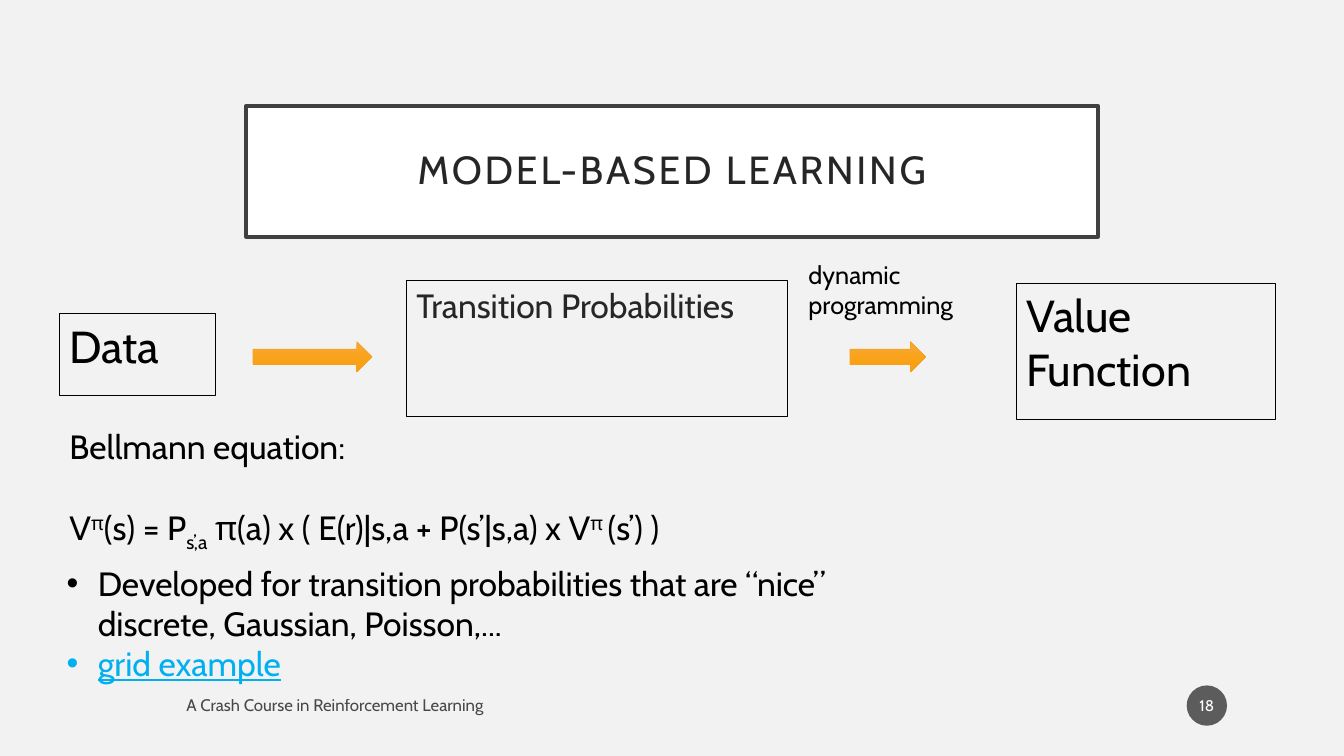
"""Build the slide on model-based learning."""
from dataclasses import dataclass
from copy import deepcopy
from lxml.etree import SubElement
from pptx import Presentation
from pptx.dml.color import RGBColor
from pptx.enum.shapes import MSO_SHAPE
from pptx.enum.text import MSO_ANCHOR, MSO_AUTO_SIZE, PP_ALIGN
from pptx.oxml.ns import qn
from pptx.util import Inches, Pt


@dataclass(frozen=True)
class Theme:
    font: str = "Cabin"
    back: str = "F2F2F2"
    white: str = "FFFFFF"
    black: str = "000000"
    ink: str = "262626"
    frame: str = "404040"
    badge: str = "1D1D1D"
    link: str = "00B0F0"
    edge: str = "F6A21D"
    glow: tuple = ("F7A942", "F9A31A", "F99E0F")
    head: int = 28
    big: int = 32
    body: int = 24
    note: int = 18
    foot: int = 12
    page: int = 11


T = Theme()
WIDE, HIGH = 13.33, 7.5
TITLE = "MODEL-BASED LEARNING"
STATE = "Transition Probabilities"
BOXES = [("Data", (0.59, 3.11, 1.55, 0.81)),
         ("Value Function", (10.08, 2.81, 2.57, 1.35))]
ARROWS = [(2.51, 1.18), (8.43, 0.75)]
STEP = "dynamic programming"
RULE = "Bellmann equation: "
TERMS = [("V", 0), ("π", 30), ("(s) = P", 0), ("s’,a", -25),
         (" π(a) x ( E(r)|s,a + P(s’|s,a) x V", 0), ("π ", 30), ("(s’) )", 0)]
POINTS = ["Developed for transition probabilities that are “nice”\vdiscrete, Gaussian, Poisson,...",
          "grid example"]
FOOT = "A Crash Course in Reinforcement Learning"
PAGE = "18"


def rgb(code):
    return RGBColor.from_string(code)


def place(shape, at):
    shape.left, shape.top, shape.width, shape.height = map(Inches, at)


def style(par, size, color=T.black, gap=0):
    par.font.name, par.font.size = T.font, Pt(size)
    par.font.color.rgb = rgb(color)
    par.space_before = Pt(gap)


def fade(node):
    SubElement(next(node.iter(qn("a:srgbClr"))), qn("a:alpha"), val="70000")


def border(shape, color=T.black, width=0.75):
    shape.line.color.rgb = rgb(color)
    shape.line.width = Pt(width)


def indent(par, depth, mark=None):
    prop = par._p.get_or_add_pPr()
    prop.set("marL", str(Inches(depth)))
    prop.set("indent", str(-Inches(depth)))
    bullet = prop.makeelement(qn("a:buChar" if mark else "a:buNone"), {"char": mark} if mark else {})
    prop.insert_element_before(bullet, "a:tabLst", "a:defRPr", "a:extLst")


def label(slide, at, text, size, grow=True):
    box = slide.shapes.add_textbox(*map(Inches, at))
    frame = box.text_frame
    frame.word_wrap = True
    frame.auto_size = MSO_AUTO_SIZE.SHAPE_TO_FIT_TEXT if grow else MSO_AUTO_SIZE.NONE
    frame.text = text
    style(frame.paragraphs[0], size)
    return box


def title(slide):
    shape = slide.shapes.title
    place(shape, (2.44, 1.05, 8.45, 1.3))
    shape.fill.solid()
    shape.fill.fore_color.rgb = rgb(T.white)
    border(shape, T.frame, 2.5)
    frame = shape.text_frame
    frame.text = TITLE
    frame.auto_size = MSO_AUTO_SIZE.NONE
    frame.vertical_anchor = MSO_ANCHOR.MIDDLE
    frame.margin_left = frame.margin_right = Inches(0.2)
    frame.margin_top = frame.margin_bottom = Inches(0.2)
    par = frame.paragraphs[0]
    style(par, T.head, T.ink)
    par.alignment, par.line_spacing = PP_ALIGN.CENTER, 0.9
    par.runs[0].font._element.set("spc", "200")


def arrow(slide, left, width):
    shape = slide.shapes.add_shape(MSO_SHAPE.RIGHT_ARROW, *map(Inches, (left, 3.39, width, 0.3)))
    shape.shadow.inherit = False
    shape.fill.gradient()
    shape.fill.gradient_angle = 270
    first = next(shape.element.iter(qn("a:gs")))
    middle = deepcopy(first)
    middle.set("pos", "50000")
    first.addnext(middle)
    for stop, color in zip(shape.fill.gradient_stops, T.glow):
        stop.color.rgb = rgb(color)
    border(shape, T.edge, 0.5)


def flow(slide):
    state = slide.placeholders[1]
    place(state, (4.03, 2.78, 3.78, 1.35))
    border(state)
    state.text_frame.text = STATE
    state.text_frame.auto_size = MSO_AUTO_SIZE.NONE
    par = state.text_frame.paragraphs[0]
    style(par, T.body, T.ink, 10)
    indent(par, 0)
    for text, at in BOXES:
        box = label(slide, at, text, T.big, False)
        border(box)
        box.text_frame.paragraphs[0].space_before = Pt(T.big * 0.2)
    for left, width in ARROWS:
        arrow(slide, left, width)
    label(slide, (7.92, 2.52, 2.28, 0.71), STEP, T.note)


def maths(slide):
    box = label(slide, (0.59, 4.18, 11.76, 1.31), RULE, T.body)
    par = box.text_frame.add_paragraph()
    style(par, T.body, gap=29)
    for text, base in TERMS:
        run = par.add_run()
        run.text = text
        if base:
            run.font._element.set("baseline", str(base * 1000))


def points(slide):
    body = slide.placeholders[2]
    place(body, (0.56, 5.53, 12.06, 1.31))
    frame = body.text_frame
    frame.auto_size = MSO_AUTO_SIZE.NONE
    frame.text = "\n".join(POINTS)
    for par, color in zip(frame.paragraphs, (T.black, T.link)):
        style(par, T.body, color)
        indent(par, 0.31, "•")
    frame.paragraphs[1].runs[0].font.underline = True


def footer(slide):
    note = label(slide, (1.75, 6.82, 6.45, 0.35), FOOT, T.foot, False)
    note.text_frame.vertical_anchor = MSO_ANCHOR.MIDDLE
    fade(note.element)
    badge = slide.shapes.add_shape(MSO_SHAPE.OVAL, *map(Inches, (11.77, 6.8, 0.4, 0.4)))
    badge.shadow.inherit = False
    badge.fill.solid()
    badge.fill.fore_color.rgb = rgb(T.badge)
    fade(badge.element)
    badge.line.fill.background()
    frame = badge.text_frame
    frame.margin_left = frame.margin_right = Inches(0.02)
    frame.vertical_anchor = MSO_ANCHOR.MIDDLE
    frame.text = PAGE
    style(frame.paragraphs[0], T.page, T.white)
    frame.paragraphs[0].alignment = PP_ALIGN.CENTER


def main():
    deck = Presentation()
    deck.slide_width, deck.slide_height = Inches(WIDE), Inches(HIGH)
    slide = deck.slides.add_slide(deck.slide_layouts[3])
    slide.background.fill.solid()
    slide.background.fill.fore_color.rgb = rgb(T.back)
    for part in (title, flow, maths, points, footer):
        part(slide)
    deck.save("out.pptx")


if __name__ == "__main__":
    main()
